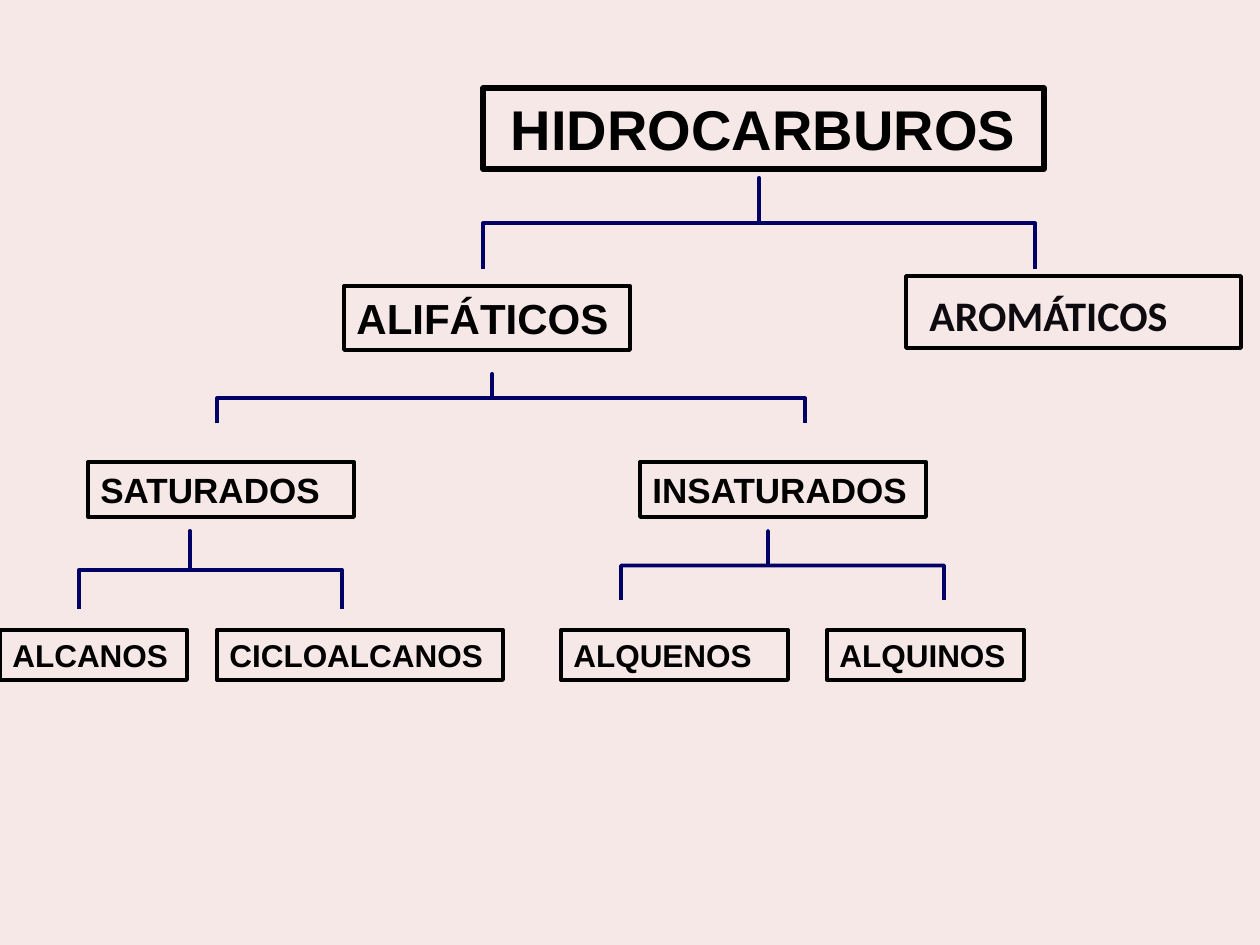
"""Build a slide with a tree that classifies hydrocarbons."""
from dataclasses import dataclass

from pptx import Presentation
from pptx.dml.color import RGBColor
from pptx.enum.shapes import MSO_SHAPE
from pptx.enum.text import MSO_AUTO_SIZE
from pptx.slide import Slide
from pptx.util import Emu, Pt

LEFT_BRACE = MSO_SHAPE.LEFT_BRACE
FIT_SHAPE = MSO_AUTO_SIZE.SHAPE_TO_FIT_TEXT
EMU_PER_PX = 914400 / 126


@dataclass(frozen=True)
class Theme:
    background: RGBColor = RGBColor(0xF7, 0xE8, 0xE8)
    ink: RGBColor = RGBColor(0x00, 0x00, 0x00)
    soft_ink: RGBColor = RGBColor(0x0D, 0x0A, 0x10)
    brace: RGBColor = RGBColor(0x00, 0x00, 0x66)
    font: str = "Arial"
    aromatic_font: str = "Calibri"
    root_size: int = 32
    spacer_size: int = 28
    family_size: int = 24
    bond_size: int = 20
    leaf_size: int = 18
    root_line: float = 3
    line: float = 2.25


THEME = Theme()


@dataclass(frozen=True)
class TextRun:
    text: str
    size: int


@dataclass(frozen=True)
class Box:
    left: int
    top: int
    width: int
    height: int
    runs: tuple[TextRun, ...]
    line: float = THEME.line
    font: str = THEME.font
    color: RGBColor = THEME.ink


@dataclass(frozen=True)
class Brace:
    left: int
    top: int
    width: int
    height: int
    stem: float


def bond_box(left: int, width: int, text: str) -> Box:
    return Box(left, 462, width, 55, (TextRun(text, THEME.bond_size),))


def leaf_box(left: int, width: int, text: str) -> Box:
    return Box(left, 630, width, 50, (TextRun(text, THEME.leaf_size),))


BOXES = (
    Box(483, 88, 561, 81, (TextRun(" HIDROCARBUROS", THEME.root_size),), THEME.root_line),
    Box(344, 286, 286, 64, (TextRun("ALIFÁTICOS", THEME.family_size),)),
    Box(
        906, 276, 335, 72,
        (TextRun(" ", THEME.spacer_size), TextRun("AROMÁTICOS", THEME.family_size)),
        font=THEME.aromatic_font,
        color=THEME.soft_ink,
    ),
    bond_box(88, 266, "SATURADOS"),
    bond_box(640, 286, "INSATURADOS"),
    leaf_box(0, 187, "ALCANOS"),
    leaf_box(217, 286, "CICLOALCANOS"),
    leaf_box(561, 227, "ALQUENOS"),
    leaf_box(827, 197, "ALQUINOS"),
)

BRACES = (
    Brace(483, 178, 552, 91, 0.5),
    Brace(217, 374, 588, 49, 0.532),
    Brace(79, 531, 263, 78, 0.579),
    Brace(621, 531, 323, 69, 0.545),
)


def px(length: float) -> Emu:
    return Emu(round(length * EMU_PER_PX))


def draw_box(slide: Slide, box: Box) -> None:
    shape = slide.shapes.add_textbox(
        px(box.left), px(box.top), px(box.width), px(box.height)
    )
    shape.fill.background()
    shape.line.color.rgb = box.color if box.font == THEME.font else THEME.ink
    shape.line.width = Pt(box.line)
    frame = shape.text_frame
    frame.word_wrap = True
    frame.auto_size = FIT_SHAPE
    paragraph = frame.paragraphs[0]
    for text_run in box.runs:
        run = paragraph.add_run()
        run.text = text_run.text
        run.font.name = box.font
        run.font.size = Pt(text_run.size)
        run.font.bold = True
        run.font.color.rgb = box.color


def draw_brace(slide: Slide, brace: Brace) -> None:
    inset = (brace.width - brace.height) / 2
    shape = slide.shapes.add_shape(
        LEFT_BRACE,
        px(brace.left + inset),
        px(brace.top - inset),
        px(brace.height),
        px(brace.width),
    )
    shape.rotation = 90
    shape.adjustments[0] = 0
    shape.adjustments[1] = brace.stem
    shape.shadow.inherit = False
    shape.fill.background()
    shape.line.color.rgb = THEME.brace
    shape.line.width = Pt(THEME.line)


def main() -> None:
    presentation = Presentation()
    presentation.slide_width = px(1260)
    presentation.slide_height = px(945)
    slide = presentation.slides.add_slide(presentation.slide_layouts[6])
    background = slide.background.fill
    background.solid()
    background.fore_color.rgb = THEME.background
    for box in BOXES:
        draw_box(slide, box)
    for brace in BRACES:
        draw_brace(slide, brace)
    presentation.save("out.pptx")


if __name__ == "__main__":
    main()
